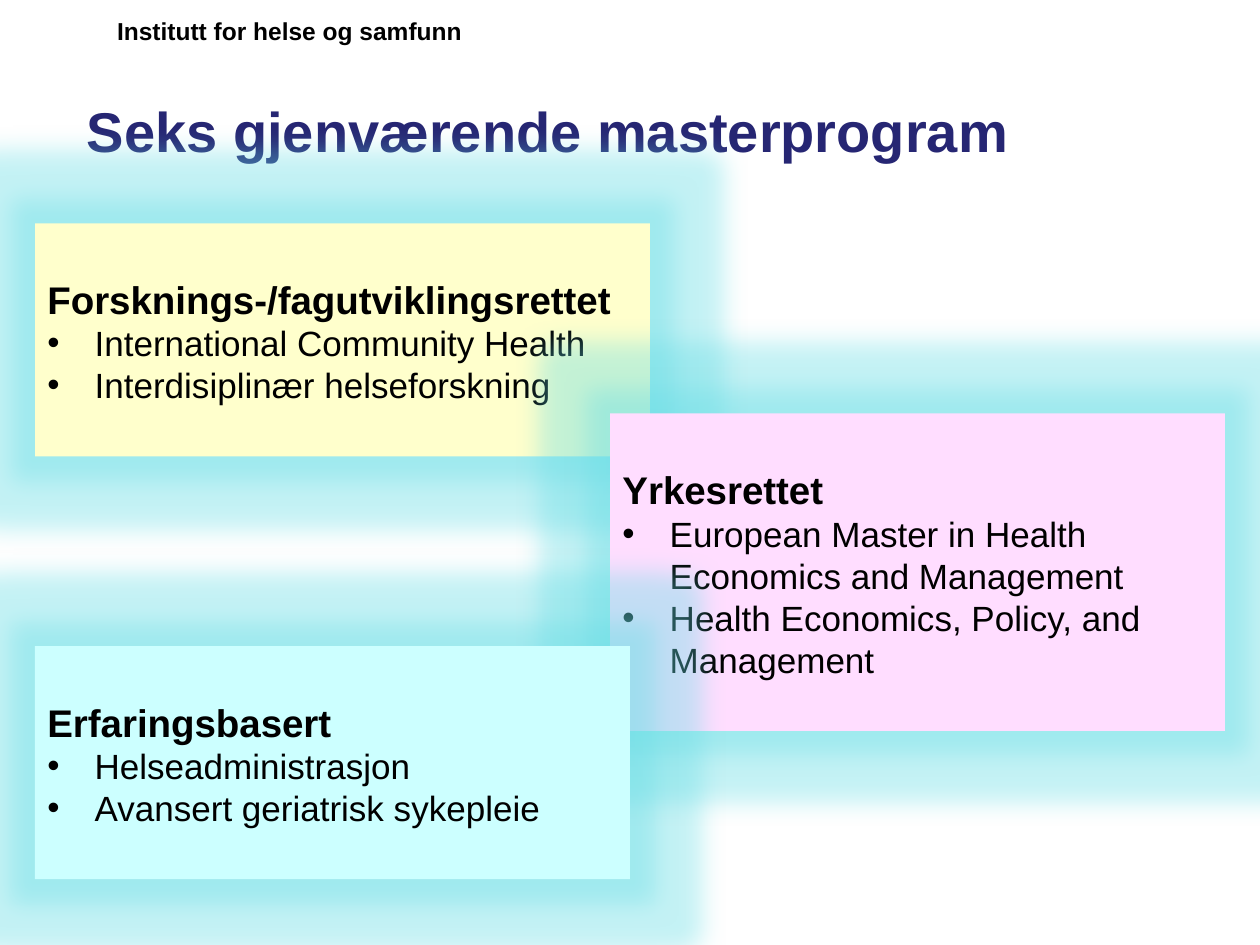
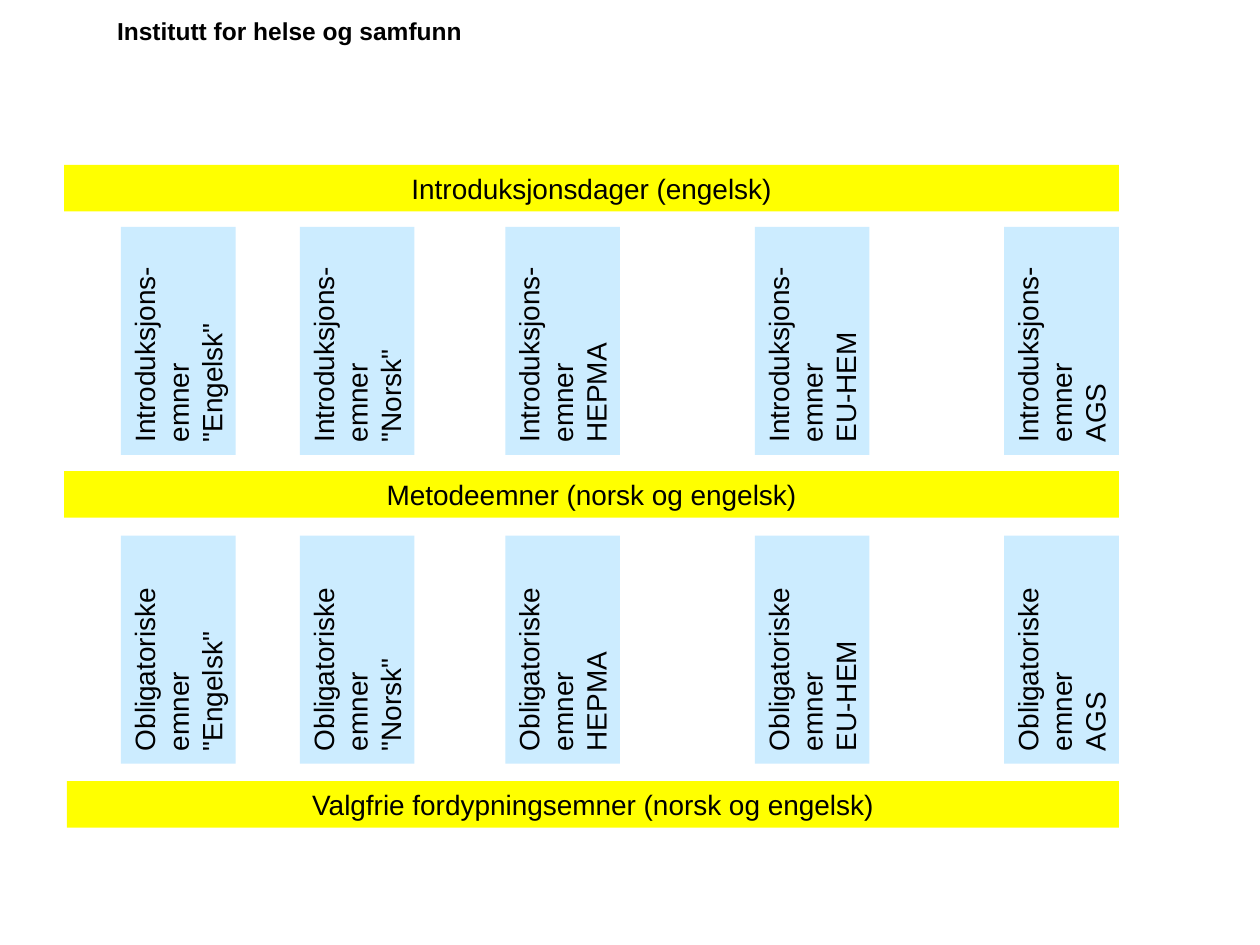
from dataclasses import dataclass

from lxml.etree import SubElement
from pptx import Presentation
from pptx.dml.color import RGBColor as RGB
from pptx.enum.shapes import MSO_SHAPE as Shape
from pptx.enum.text import MSO_ANCHOR as Anchor, PP_ALIGN as Align
from pptx.oxml.ns import qn
from pptx.util import Pt

TITLE_ONLY, BLANK = 5, 6


@dataclass(frozen=True)
class Theme:
    font: str = "Arial"
    ink: str = "000000"
    title: str = "262673"
    research: str = "FFFFCC"
    vocational: str = "FFDDFF"
    experience: str = "CCFFFF"
    common: str = "FFFF00"
    course: str = "CCECFF"
    glow: str = "66DDE5"
    title_size: int = 32
    heading_size: int = 22
    item_size: int = 20
    course_size: int = 16
    header_size: int = 14
    leading: float = 1.2
    glow_radius: int = 28
    glow_alpha: int = 38


class Deck:
    def __init__(self, theme):
        self.theme = theme
        self.prs = Presentation()
        self.prs.slide_width, self.prs.slide_height = Pt(720), Pt(540)
        self.slide = None

    def new_slide(self, title=None):
        layout = self.prs.slide_layouts[BLANK if title is None else TITLE_ONLY]
        self.slide = self.prs.slides.add_slide(layout)
        self.header("Institutt for helse og samfunn")
        if title is not None:
            self.title(title)

    def style(self, paragraph, size, bold=False, color=None, spaced=True):
        if spaced:
            paragraph.line_spacing = Pt(round(size * self.theme.leading, 1))
        for run in paragraph.runs:
            run.font.name = self.theme.font
            run.font.size = Pt(size)
            run.font.bold = bold
            run.font.color.rgb = RGB.from_string(color or self.theme.ink)

    def header(self, text):
        frame = self.slide.shapes.add_textbox(Pt(59.8), Pt(9.4), Pt(216), Pt(21)).text_frame
        frame.word_wrap = True
        frame.margin_top = 0
        frame.text = text
        self.style(frame.paragraphs[0], self.theme.header_size, bold=True, spaced=False)

    def title(self, text):
        title = self.slide.shapes.title
        title.left, title.top, title.width, title.height = Pt(42.5), Pt(37.4), Pt(629.3), Pt(73.4)
        frame = title.text_frame
        frame.text = text
        frame.vertical_anchor = Anchor.MIDDLE
        frame.paragraphs[0].alignment = Align.LEFT
        self.style(frame.paragraphs[0], self.theme.title_size, True, self.theme.title, spaced=False)

    def box(self, left, top, width, height, fill, text):
        box = self.slide.shapes.add_shape(
            Shape.RECTANGLE, Pt(left), Pt(top), Pt(width), Pt(height))
        box.shadow.inherit = False
        box.fill.solid()
        box.fill.fore_color.rgb = RGB.from_string(fill)
        box.line.fill.background()
        frame = box.text_frame
        frame.word_wrap = True
        frame.vertical_anchor = Anchor.TOP
        frame.text = text
        for paragraph in frame.paragraphs:
            paragraph.alignment = Align.LEFT
        return box

    def glow(self, box):
        effects = box._element.spPr.find(qn("a:effectLst"))
        glow = SubElement(effects, qn("a:glow"), rad=str(Pt(self.theme.glow_radius)))
        color = SubElement(glow, qn("a:srgbClr"), val=self.theme.glow)
        SubElement(color, qn("a:alpha"), val=str(self.theme.glow_alpha * 1000))

    def bullet(self, paragraph):
        properties = paragraph._p.get_or_add_pPr()
        properties.set("marL", str(Pt(27)))
        properties.set("indent", str(-Pt(27)))
        SubElement(properties, qn("a:buFont"), typeface=self.theme.font)
        SubElement(properties, qn("a:buChar"), char="•")

    def programme_card(self, left, top, width, height, fill, heading, items):
        card = self.box(left, top, width, height, fill, "\n".join([heading, *items]))
        self.glow(card)
        card.text_frame.margin_top = Pt(30)
        first, *rest = card.text_frame.paragraphs
        self.style(first, self.theme.heading_size, bold=True)
        for paragraph in rest:
            self.bullet(paragraph)
            self.style(paragraph, self.theme.item_size)

    def common_band(self, left, top, right, text):
        band = self.box(left, top, right - left, 26.6, self.theme.common, text)
        paragraph = band.text_frame.paragraphs[0]
        paragraph.alignment = Align.CENTER
        self.style(paragraph, self.theme.course_size)

    def course_box(self, center_x, center_y, course, programme):
        """Place a box that reads upwards around its centre."""
        length, depth = 130.3, 65.5
        box = self.box(center_x - length / 2, center_y - depth / 2, length, depth,
                       self.theme.course, f"{course}\n{programme}")
        box.rotation = 270
        for paragraph in box.text_frame.paragraphs:
            self.style(paragraph, self.theme.course_size)


def programmes(deck):
    theme = deck.theme
    deck.new_slide("Seks gjenværende masterprogram")
    deck.programme_card(
        20, 127.6, 351.4, 133.2, theme.research, "Forsknings-/fagutviklingsrettet",
        ["International Community Health", "Interdisiplinær helseforskning"])
    deck.programme_card(
        348.6, 236.2, 351.4, 181.4, theme.vocational, "Yrkesrettet",
        ["European Master in Health Economics and Management",
         "Health Economics, Policy, and Management"])
    deck.programme_card(
        20, 369.2, 340, 133.2, theme.experience, "Erfaringsbasert",
        ["Helseadministrasjon", "Avansert geriatrisk sykepleie"])


def course_structure(deck):
    deck.new_slide()
    bands = [(36.7, 94.3, "Introduksjonsdager (engelsk)"),
             (36.7, 269.3, "Metodeemner (norsk og engelsk)"),
             (38.2, 446.4, "Valgfrie fordypningsemner (norsk og engelsk)")]
    rows = [(194.8, "Introduksjons-emner"), (371.2, "Obligatoriske emner")]
    columns = [(101.9, '"Engelsk"'), (204.1, '"Norsk"'), (321.5, "HEPMA"),
               (464.1, "EU-HEM"), (606.6, "AGS")]
    for left, top, text in bands:
        deck.common_band(left, top, 639.4, text)
    for center_y, course in rows:
        for center_x, programme in columns:
            deck.course_box(center_x, center_y, course, programme)


def main():
    deck = Deck(Theme())
    programmes(deck)
    course_structure(deck)
    deck.prs.save("out.pptx")


if __name__ == "__main__":
    main()
